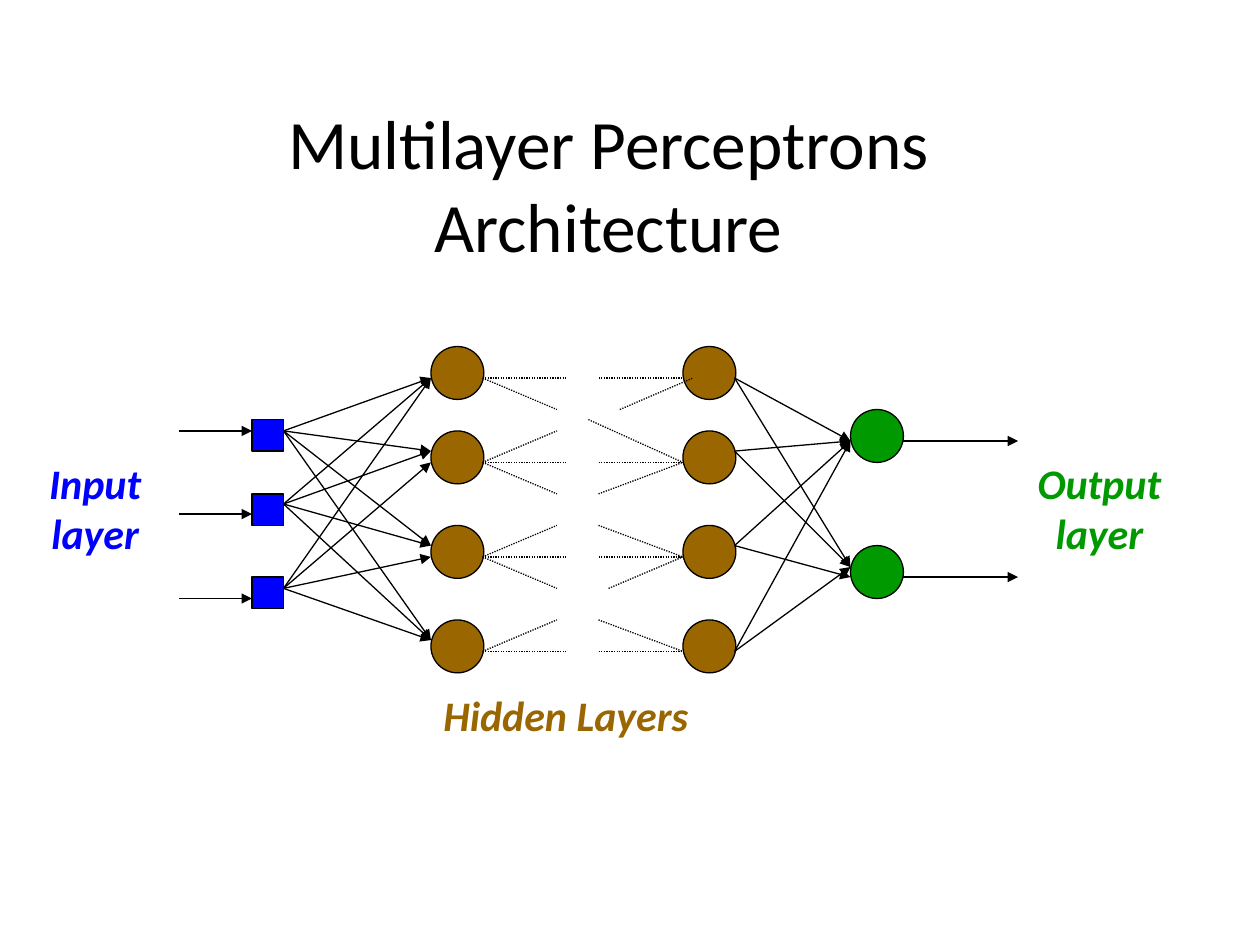
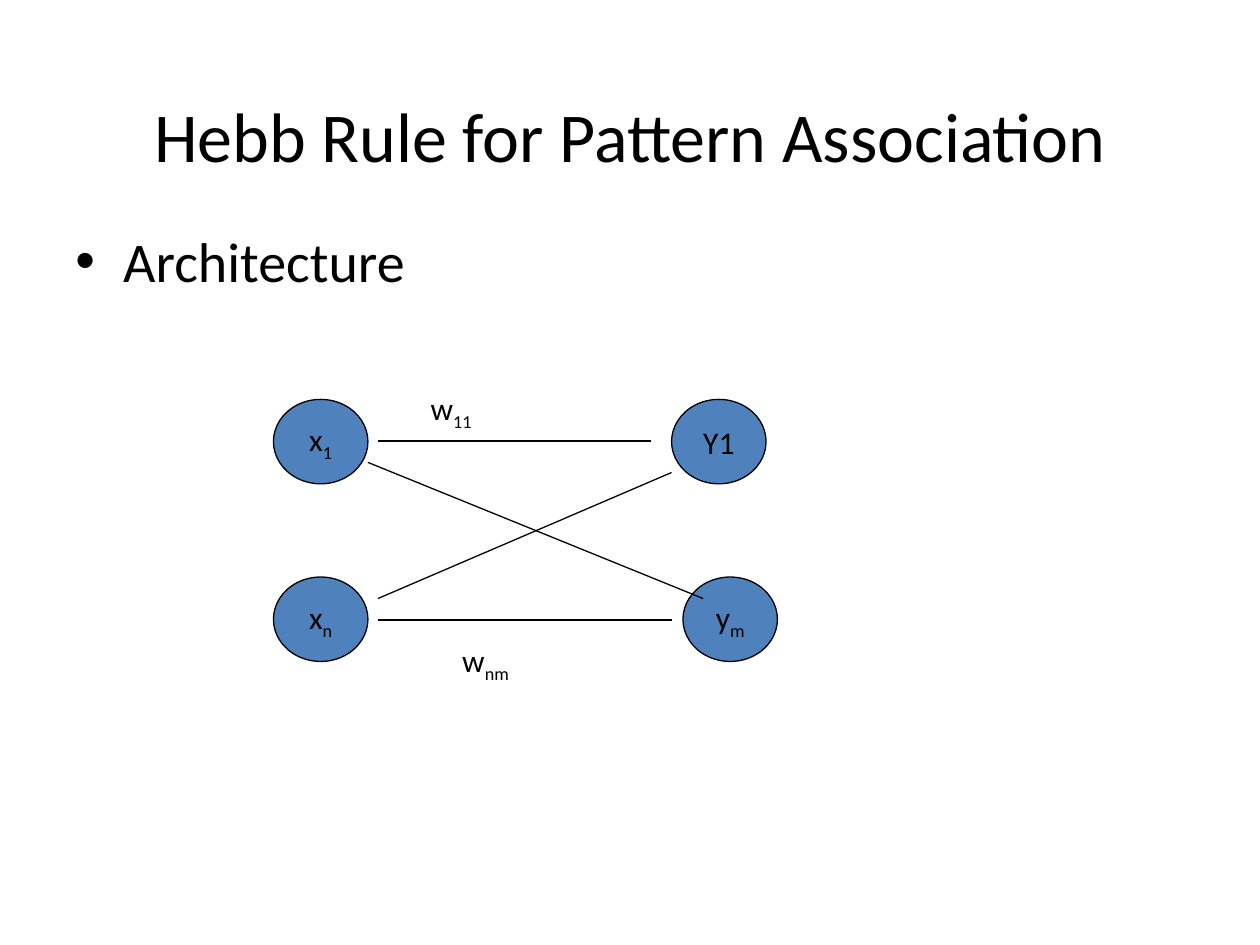
from lxml import etree
from pptx import Presentation
from pptx.dml.color import RGBColor
from pptx.enum import dml, shapes, text
from pptx.oxml.ns import qn
from pptx.util import Inches, Pt

# Shared style
FONT = "Calibri"
BLACK = RGBColor(0x00, 0x00, 0x00)
BLUE = RGBColor(0x00, 0x00, 0xFF)
GREEN = RGBColor(0x00, 0x99, 0x00)
BROWN = RGBColor(0x99, 0x66, 0x00)
STEEL = RGBColor(0x4F, 0x81, 0xBD)
LINE_WIDTH = 0.75
RECT = shapes.MSO_SHAPE.RECTANGLE
OVAL = shapes.MSO_SHAPE.OVAL
LEFT, CENTER = text.PP_ALIGN.LEFT, text.PP_ALIGN.CENTER

# Slide 1: layers as (shape, colour, left, size, tops)
PERCEPTRON_TITLE = "Multilayer Perceptrons\vArchitecture"
HIDDEN_TOPS = (2.75, 3.42, 4.17, 4.92)
LAYERS = [
    (RECT, BLUE, 2.0, 0.25, (3.33, 3.92, 4.58)),
    (OVAL, BROWN, 3.42, 0.42, HIDDEN_TOPS),
    (OVAL, BROWN, 5.42, 0.42, HIDDEN_TOPS),
    (OVAL, GREEN, 6.75, 0.42, (3.25, 4.33)),
]
LAYER_LABELS = [
    ("Input\nlayer", BLUE, (0.25, 3.58, 1.01, 0.9), CENTER),
    ("Output\nlayer", GREEN, (8.08, 3.58, 1.29, 0.9), CENTER),
    ("Hidden Layers", BROWN, (3.42, 5.42, 2.5, 0.5), LEFT),
]
# Arrow bundles: (start x, end x, {start y: end ys})
ARROWS = [
    (1.42, 2.0, {y: (y,) for y in (3.42, 4.08, 4.75)}),
    (2.25, 3.42, {3.42: (3, 3.58, 4.33, 5.08),
                  4.0: (3, 3.58, 4.33, 5.08),
                  4.67: (3, 3.67, 4.42, 5.08)}),
    (5.83, 6.75, {3.0: (3.5, 4.5), 3.58: (3.5, 4.5),
                  4.33: (3.5, 4.58), 5.17: (3.5, 4.5)}),
    (7.17, 8.08, {y: (y,) for y in (3.5, 4.58)}),
]
# Dotted stubs: each row level with the directions of its left-hand diagonals
STUB_ROWS = {3.0: (1,), 3.67: (-1, 1), 4.42: (-1, 1), 5.17: (-1,)}
RIGHT_DIAGONALS = [
    (4.92, 3.25, 5.5, 3.0), (4.67, 3.33, 5.42, 3.67), (4.75, 3.92, 5.42, 3.67),
    (4.75, 4.17, 5.42, 4.42), (4.83, 4.67, 5.42, 4.42), (4.75, 4.92, 5.42, 5.17),
]

# Slide 2: text as (base, subscript)
HEBB_TITLE = "Hebb Rule for Pattern Association"
HEBB_BULLET = "Architecture"
UNIT_SIZE = (0.75, 0.67)
UNITS = [("x", "1", 2.17, 3.17), ("x", "n", 2.17, 4.58),
         ("y", "m", 5.42, 4.58), ("Y1", "", 5.33, 3.17)]
WEIGHTS = [("w", "11", (3.32, 3.04, 0.57, 0.4)), ("w", "nm", (3.57, 5.04, 0.61, 0.4))]
WEIGHT_LINES = [(3, 3.5, 5.17, 3.5), (3, 4.92, 5.33, 4.92),
                (3, 4.75, 5.33, 3.75), (2.92, 3.67, 5.58, 4.75)]


def inches(values):
    return [Inches(value) for value in values]


def style_text(frame, size, color=BLACK, align=LEFT, emphasis=None):
    for paragraph in frame.paragraphs:
        paragraph.alignment = align
        for run in paragraph.runs:
            font = run.font
            font.name, font.size = FONT, Pt(size)
            font.color.rgb = color
            font.bold = font.italic = emphasis


def add_titled_slide(presentation, title, box, size):
    slide = presentation.slides.add_slide(presentation.slide_layouts[5])
    shape = slide.shapes.title
    shape.left, shape.top, shape.width, shape.height = inches(box)
    frame = shape.text_frame
    frame.text = title
    frame.auto_size = text.MSO_AUTO_SIZE.NONE
    frame.vertical_anchor = text.MSO_ANCHOR.MIDDLE
    style_text(frame, size, align=CENTER)
    return slide


def add_label(slide, label, box, wrap=False):
    frame = slide.shapes.add_textbox(*inches(box)).text_frame
    frame.text = label
    frame.word_wrap = wrap
    if not wrap:
        frame.auto_size = text.MSO_AUTO_SIZE.SHAPE_TO_FIT_TEXT
    return frame


def add_node(slide, kind, color, box):
    node = slide.shapes.add_shape(kind, *inches(box))
    node.shadow.inherit = False
    node.fill.solid()
    node.fill.fore_color.rgb = color
    node.line.color.rgb = BLACK
    node.line.width = Pt(LINE_WIDTH)
    return node


def add_line(slide, ends, arrow=False, dotted=False):
    connector = slide.shapes.add_connector(shapes.MSO_CONNECTOR.STRAIGHT, *inches(ends))
    line = connector.line
    line.color.rgb = BLACK
    line.width = Pt(LINE_WIDTH)
    if dotted:
        line.dash_style = dml.MSO_LINE.ROUND_DOT
    properties = connector.element.spPr
    if arrow:
        etree.SubElement(properties.find(qn("a:ln")), qn("a:tailEnd"), type="triangle")
    etree.SubElement(properties, qn("a:effectLst"))


def add_subscript(frame, subscript):
    if subscript:
        run = frame.paragraphs[0].add_run()
        run.text = subscript
        run.font._element.set("baseline", "-25000")


def build_perceptron_slide(presentation):
    slide = add_titled_slide(presentation, PERCEPTRON_TITLE, (0.58, 0.83, 8.5, 1.25), 39.6)
    for label, color, box, align in LAYER_LABELS:
        style_text(add_label(slide, label, box), 24, color, align, emphasis=True)

    # Neurons
    for kind, color, left, size, tops in LAYERS:
        for top in tops:
            add_node(slide, kind, color, (left, top, size, size))

    # Weighted connections
    for start_x, end_x, bundle in ARROWS:
        for start_y, end_ys in bundle.items():
            for end_y in end_ys:
                add_line(slide, (start_x, start_y, end_x, end_y), arrow=True)

    # Omitted connections between the hidden layers
    stubs = list(RIGHT_DIAGONALS)
    for y, directions in STUB_ROWS.items():
        stubs += [(3.83, y, 4.5, y), (4.75, y, 5.42, y)]
        stubs += [(3.83, y, 4.42, y + 0.25 * direction) for direction in directions]
    for ends in stubs:
        add_line(slide, ends, dotted=True)


def build_hebb_slide(presentation):
    slide = add_titled_slide(presentation, HEBB_TITLE, (0.5, 0.58, 9, 0.97), 40)

    # Bullet
    frame = add_label(slide, HEBB_BULLET, (0.5, 1.75, 9, 4.95), wrap=True)
    style_text(frame, 32)
    paragraph = frame.paragraphs[0]
    paragraph.space_before = Pt(6.4)
    properties = paragraph._p.get_or_add_pPr()
    properties.set("marL", str(Inches(0.38)))
    properties.set("indent", str(-Inches(0.38)))
    etree.SubElement(properties, qn("a:buFont"), typeface="Arial")
    etree.SubElement(properties, qn("a:buChar"), char="•")

    # Units
    for base, subscript, left, top in UNITS:
        frame = add_node(slide, OVAL, STEEL, (left, top, *UNIT_SIZE)).text_frame
        frame.text = base
        frame.word_wrap = False
        frame.vertical_anchor = text.MSO_ANCHOR.MIDDLE
        add_subscript(frame, subscript)
        style_text(frame, 18, align=CENTER)

    # Weights
    for ends in WEIGHT_LINES:
        add_line(slide, ends)
    for base, subscript, box in WEIGHTS:
        frame = add_label(slide, base, box)
        add_subscript(frame, subscript)
        style_text(frame, 18)


def main():
    presentation = Presentation()
    presentation.slide_width, presentation.slide_height = Inches(10), Inches(7.5)
    build_perceptron_slide(presentation)
    build_hebb_slide(presentation)
    presentation.save("out.pptx")


if __name__ == "__main__":
    main()
